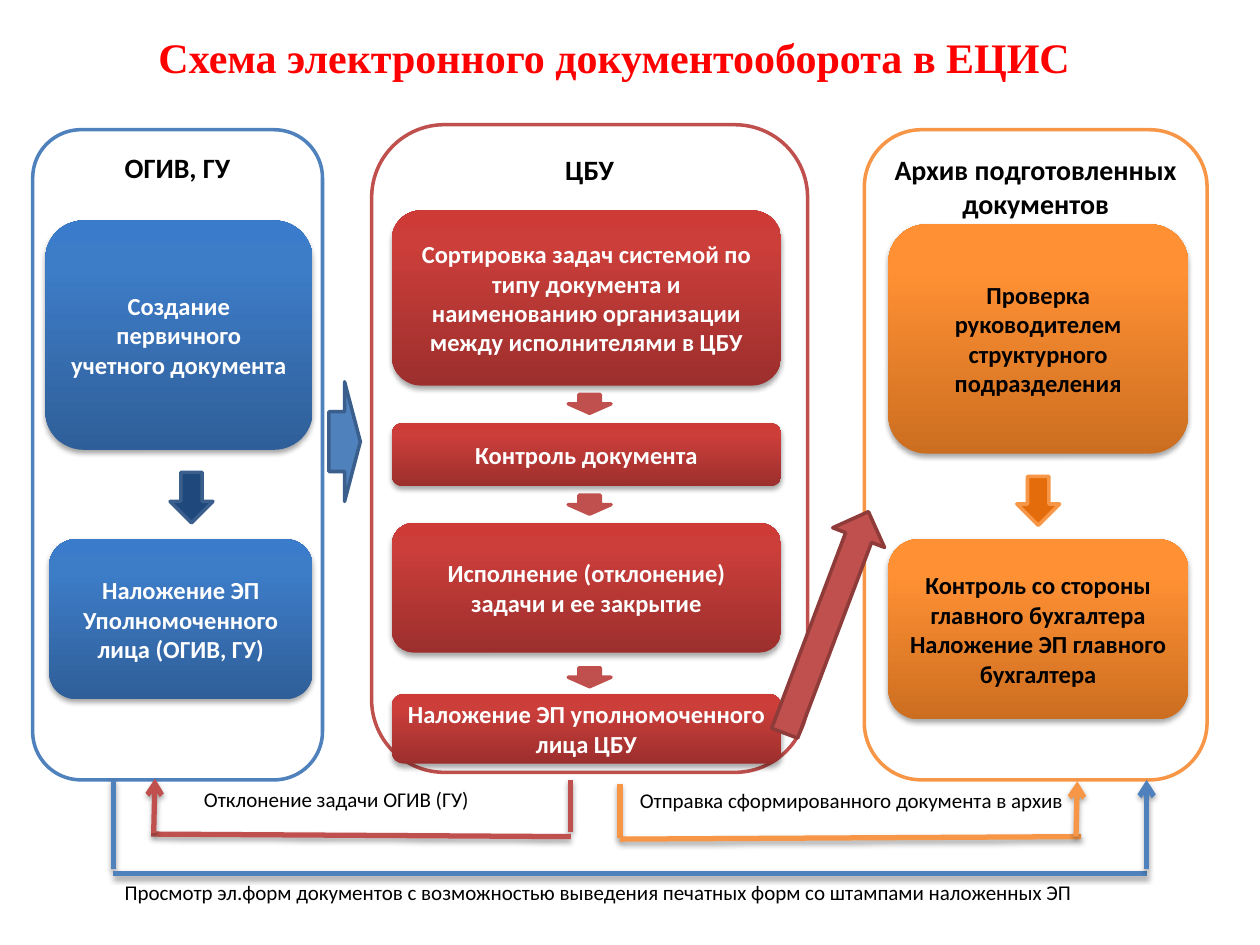
from lxml.etree import SubElement
from pptx import Presentation
from pptx.dml.color import RGBColor
from pptx.enum.shapes import MSO_CONNECTOR, MSO_SHAPE
from pptx.enum.text import MSO_ANCHOR, PP_ALIGN
from pptx.oxml.ns import qn
from pptx.util import Inches, Pt

COLORS = {
    "title": "FF0000", "black": "000000", "white": "FFFFFF",
    "blue": "4F81BD", "blue_edge": "3A5F8C", "navy": "1F497D",
    "red": "C0504D", "red_edge": "8E3B39",
    "orange": "F79646", "dark_orange": "E46C0A",
}
GRADIENTS = {
    "blue": ("2F5F99", "3D7CC7", "3A7CCB"),
    "red": ("9C2F2D", "CB3E3A", "CE3B37"),
    "orange": ("CC6E20", "FF9034", "FF9136"),
}
GRADIENT_POSITIONS = (0, 80, 100)

PANELS = [
    ("ЦБУ", "red", (2.95, 0.99, 3.46, 5.14)),
    ("Архив подготовленных документов", "orange", (6.86, 1.03, 2.72, 5.16)),
    ("ОГИВ, ГУ", "blue", (0.26, 1.03, 2.3, 5.16)),
]
STEPS = [
    (["Создание первичного учетного документа"], "blue", (0.36, 1.75, 2.12, 1.82)),
    (["Наложение ЭП Уполномоченного лица (ОГИВ, ГУ)"], "blue", (0.39, 4.28, 2.09, 1.27)),
    (["Сортировка задач системой по типу документа и наименованию организации "
      "между исполнителями в ЦБУ"], "red", (3.11, 1.67, 3.09, 1.39)),
    (["Контроль документа"], "red", (3.11, 3.36, 3.09, 0.5)),
    (["Исполнение (отклонение) задачи и ее закрытие"], "red", (3.11, 4.15, 3.09, 1.03)),
    (["Наложение ЭП уполномоченного лица ЦБУ"], "red", (3.11, 5.51, 3.09, 0.55)),
    (["Проверка руководителем структурного подразделения"], "orange",
     (7.05, 1.78, 2.38, 1.82)),
    (["Контроль со стороны главного бухгалтера", "Наложение ЭП главного бухгалтера"],
     "orange", (7.05, 4.28, 2.38, 1.43)),
]
# Each route is a list of (start, end) segments; the last one carries the arrowhead.
ROUTES = {
    "blue": [((0.9, 6.19), (0.9, 6.9)), ((0.9, 6.93), (9.1, 6.93)),
             ((9.1, 6.9), (9.1, 6.19))],
    "orange": [((4.92, 6.22), (4.92, 6.65)), ((4.92, 6.66), (8.58, 6.64)),
               ((8.54, 6.64), (8.55, 6.2))],
    "red": [((4.53, 6.19), (4.53, 6.6)), ((1.2, 6.62), (4.53, 6.64)),
            ((1.22, 6.61), (1.23, 6.18))],
}
ROUTE_LABELS = [
    ("Просмотр эл.форм документов с возможностью выведения печатных форм "
     "со штампами наложенных ЭП", (0.89, 6.93, 8.2, 0.3)),
    ("Отправка сформированного документа в архив", (4.98, 6.2, 3.76, 0.3)),
    ("Отклонение задачи ОГИВ (ГУ)", (1.52, 6.19, 2.38, 0.3)),
]


def color(name):
    return RGBColor.from_string(COLORS[name])


def write(box, texts, size, color_name, bold=True, font="Calibri",
          align=PP_ALIGN.CENTER, anchor=MSO_ANCHOR.MIDDLE):
    frame = box.text_frame
    frame.word_wrap = True
    frame.vertical_anchor = anchor
    frame.text = "\n".join(texts)
    for para in frame.paragraphs:
        para.alignment = align
        para.font.name = font
        para.font.size = Pt(size)
        para.font.bold = bold
        para.font.color.rgb = color(color_name)


def add_text(page, text, place, size, color_name, **style):
    box = page.shapes.add_textbox(*map(Inches, place))
    write(box, [text], size, color_name, **style)


def add_outlined(page, kind, place, fill, line):
    shape = page.shapes.add_shape(kind, *map(Inches, place))
    shape.shadow.inherit = False
    shape.fill.solid()
    shape.fill.fore_color.rgb = color(fill)
    shape.line.color.rgb = color(line)
    shape.line.width = Pt(2)
    return shape


def add_drop_shadow(element):
    """Put a soft shadow straight below a shape or connector."""
    properties = element.spPr
    effects = properties.find(qn("a:effectLst"))
    if effects is None:
        effects = SubElement(properties, qn("a:effectLst"))
    shadow = SubElement(effects, qn("a:outerShdw"), blurRad=str(Pt(3.1)),
                        dist=str(Pt(1.8)), dir="5400000", rotWithShape="0")
    tint = SubElement(shadow, qn("a:srgbClr"), val=COLORS["black"])
    SubElement(tint, qn("a:alpha"), val="35000")


def fill_gradient(shape, stops):
    """Fill upwards from the bottom edge with three stops."""
    shape.fill.gradient()
    shape.fill.gradient_angle = 90
    stop_list = shape._element.spPr.find(".//" + qn("a:gsLst"))
    for stop in list(stop_list):
        stop_list.remove(stop)
    for position, value in zip(GRADIENT_POSITIONS, stops):
        stop = SubElement(stop_list, qn("a:gs"), pos=str(position * 1000))
        SubElement(stop, qn("a:srgbClr"), val=value)


def add_panel(page, heading, line, place):
    panel = add_outlined(page, MSO_SHAPE.ROUNDED_RECTANGLE, place, "white", line)
    write(panel, [heading], 16, "black", anchor=MSO_ANCHOR.TOP)


def add_step(page, texts, tone, place):
    step = page.shapes.add_shape(MSO_SHAPE.ROUNDED_RECTANGLE, *map(Inches, place))
    step.shadow.inherit = False
    fill_gradient(step, GRADIENTS[tone])
    step.line.fill.background()
    add_drop_shadow(step._element)
    write(step, texts, 14, "black" if tone == "orange" else "white")


def add_segment(page, start, end, tone, arrowhead):
    segment = page.shapes.add_connector(
        MSO_CONNECTOR.STRAIGHT, *map(Inches, (*start, *end)))
    segment.line.color.rgb = color(tone)
    segment.line.width = Pt(3)
    if arrowhead:
        SubElement(segment.line._get_or_add_ln(), qn("a:tailEnd"), type="arrow")
    add_drop_shadow(segment._element)


def add_block_arrows(page):
    down, right = MSO_SHAPE.DOWN_ARROW, MSO_SHAPE.RIGHT_ARROW
    add_outlined(page, down, (1.35, 3.75, 0.34, 0.4), "navy", "blue_edge")
    add_outlined(page, down, (8.07, 3.78, 0.34, 0.39), "dark_orange", "orange")
    for top in (3.13, 3.93, 5.3):
        add_outlined(page, down, (4.51, top, 0.34, 0.15), "red", "red")
    add_outlined(page, right, (2.61, 3.03, 0.25, 0.95), "blue", "blue_edge")
    to_archive = add_outlined(page, right, (5.62, 4.72, 1.88, 0.44), "red", "red_edge")
    to_archive.rotation = 290.7


def main():
    deck = Presentation()
    deck.slide_width, deck.slide_height = Inches(10), Inches(7.5)
    page = deck.slides.add_slide(deck.slide_layouts[6])
    for panel in PANELS:
        add_panel(page, *panel)
    add_text(page, "Схема электронного документооборота в ЕЦИС",
             (0, 0, 9.75, 0.9), 24, "title", font="Times New Roman")
    for step in STEPS:
        add_step(page, *step)
    add_block_arrows(page)
    for tone, segments in ROUTES.items():
        for start, end in segments:
            add_segment(page, start, end, tone, (start, end) == segments[-1])
    for text, place in ROUTE_LABELS:
        add_text(page, text, place, 12, "black", bold=False,
                 align=PP_ALIGN.LEFT, anchor=MSO_ANCHOR.TOP)
    deck.save("out.pptx")


if __name__ == "__main__":
    main()
